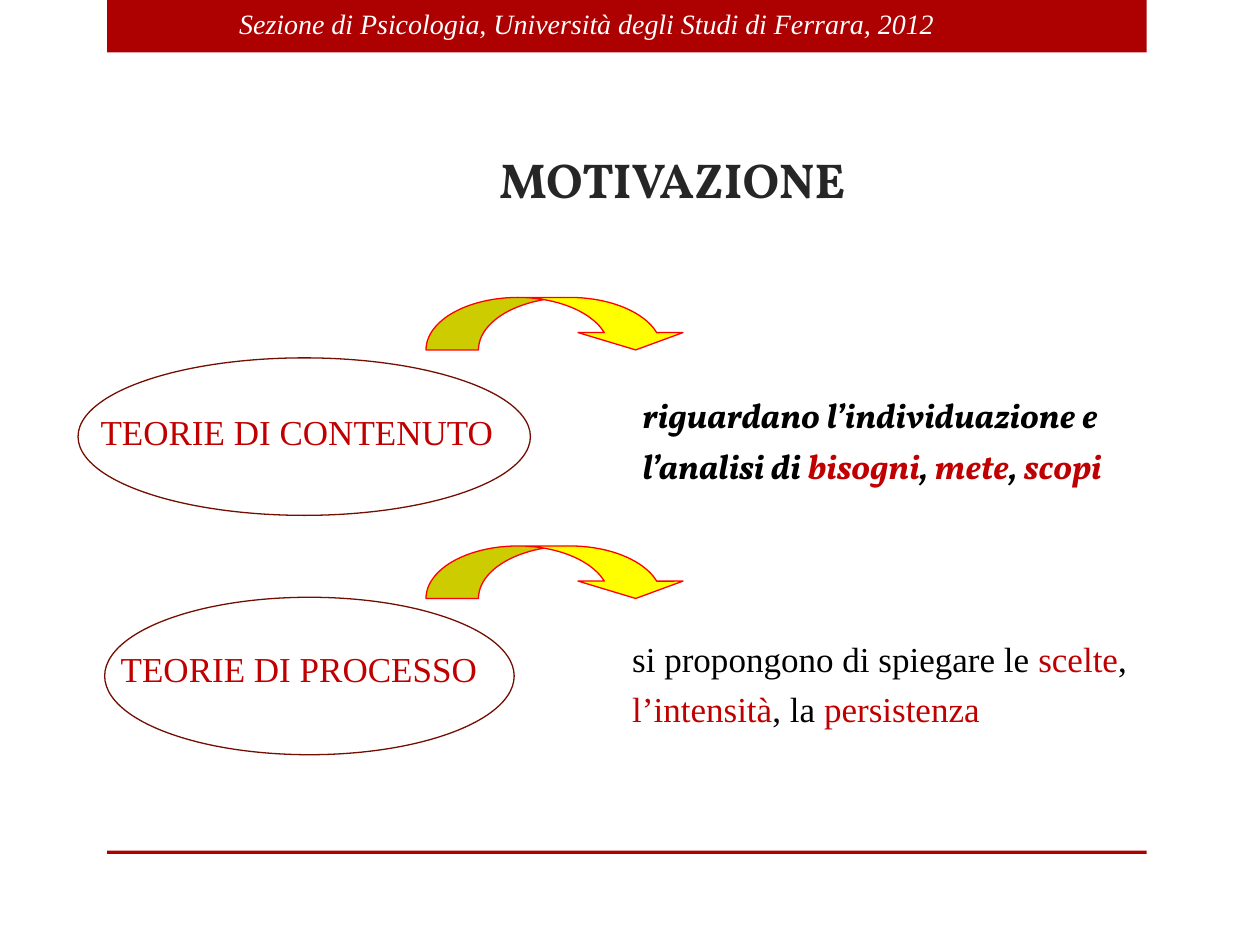
from lxml import etree
from pptx import Presentation
from pptx.dml.color import RGBColor
from pptx.enum.shapes import MSO_SHAPE
from pptx.enum.text import MSO_ANCHOR, PP_ALIGN
from pptx.util import Pt

RECT, ELLIPSE, ARROW = MSO_SHAPE.RECTANGLE, MSO_SHAPE.OVAL, MSO_SHAPE.CURVED_DOWN_ARROW
BOTTOM, CENTER = MSO_ANCHOR.BOTTOM, PP_ALIGN.CENTER

WHITE = RGBColor(0xFF, 0xFF, 0xFF)
BLACK = RGBColor(0, 0, 0)
CHARCOAL = RGBColor(0x26, 0x26, 0x26)
BAND_RED = RGBColor(0xAD, 0x01, 0x01)
DARK_RED = RGBColor(0x73, 0x0E, 0x00)
KEY_RED = RGBColor(0xC0, 0x00, 0x00)
RED = RGBColor(0xFF, 0, 0)
YELLOW = RGBColor(0xFF, 0xFF, 0)

SERIF, DISPLAY = "Times New Roman", "Vollkorn"
LABEL = {"name": SERIF, "size": Pt(20)}
STRONG = {"name": DISPLAY, "size": Pt(20), "bold": True, "italic": True}

# Boxes inside a row are (left, top, width, height) from the row's corner.
ROWS = [
    {
        "box": (44.6, 170, 663, 125),
        "ellipse": (0, 34.5, 258.5, 90),
        "label": ("TEORIE DI CONTENUTO", (5.8, 61.1, 256.3, 44)),
        "text_box": (315.4, 46.7, 306, 65.5),
        "text_fill": WHITE,
        "style": STRONG,
        "runs": [("riguardano l’individuazione e l’analisi di ", BLACK),
                 ("bisogni", KEY_RED), (", ", BLACK), ("mete", KEY_RED),
                 (", ", BLACK), ("scopi", KEY_RED)],
    },
    {
        "box": (44.6, 312, 663, 120),
        "ellipse": (15.2, 29.3, 234, 90),
        "label": ("TEORIE DI PROCESSO", (17.3, 54.5, 234.7, 44)),
        "text_box": (309.6, 43.7, 354.2, 65.5),
        "text_fill": None,
        "style": LABEL,
        "runs": [("si propongono di spiegare le ", BLACK), ("scelte", KEY_RED),
                 (", ", BLACK), ("l’intensità", KEY_RED), (", la ", BLACK),
                 ("persistenza", KEY_RED)],
    },
]


def inside(box, part):
    return box[0] + part[0], box[1] + part[1], part[2], part[3]


def add_shape(s, kind, box, fill, line=None):
    sp = s.shapes.add_shape(kind, *map(Pt, box))
    sp.shadow.inherit = False
    sp.fill.solid()
    sp.fill.fore_color.rgb = fill
    if line is None:
        sp.line.fill.background()
    else:
        sp.line.color.rgb = line
        sp.line.width = Pt(0.75)
    return sp


def write_runs(p, runs, style):
    for text, color in runs:
        r = p.add_run()
        r.text = text
        for key, value in style.items():
            setattr(r.font, key, value)
        r.font.color.rgb = color


def add_text(s, box, runs, style, fill=None, spacing=None):
    sp = s.shapes.add_textbox(*map(Pt, box))
    if fill is not None:
        sp.fill.solid()
        sp.fill.fore_color.rgb = fill
    tf = sp.text_frame
    tf.word_wrap = True
    p = tf.paragraphs[0]
    p.line_spacing = spacing
    write_runs(p, runs, style)


def add_frame(s, box):
    """Header band with its caption, and the rule at the foot."""
    width, height = box[2:]
    add_shape(s, RECT, inside(box, (0, 0, width, 30)), BAND_RED)
    add_shape(s, RECT, inside(box, (0, height - 2, width, 2)), BAND_RED)
    add_text(s, inside(box, (68.4, 0, 422, 27)),
             [("Sezione di Psicologia, Università degli Studi di Ferrara, 2012", WHITE)],
             {"name": SERIF, "size": Pt(16), "italic": True})


def add_title(s, box):
    sp = s.shapes.title
    sp.left, sp.top, sp.width, sp.height = map(Pt, box)
    tf = sp.text_frame
    tf.vertical_anchor = BOTTOM
    p = tf.paragraphs[0]
    p.alignment = CENTER
    write_runs(p, [("MOTIVAZIONE", CHARCOAL)],
               {"name": DISPLAY, "size": Pt(28), "bold": True})


def add_theory_row(s, row):
    box = row["box"]
    add_shape(s, ELLIPSE, inside(box, row["ellipse"]), WHITE, DARK_RED)
    add_text(s, inside(box, row["text_box"]), row["runs"], row["style"],
             row["text_fill"], 1.2)
    label, label_box = row["label"]
    add_text(s, inside(box, label_box), [(label, KEY_RED)], LABEL)
    arrow = add_shape(s, ARROW, inside(box, (198.8, 0, 149.8, 30)), YELLOW, RED)
    for i, value in enumerate((1, 2, 0.33)):
        arrow.adjustments[i] = value


def main():
    prs = Presentation()
    prs.slide_width, prs.slide_height = Pt(720), Pt(540)
    s = prs.slides.add_slide(prs.slide_layouts[5])
    add_frame(s, (61.2, 0, 594, 488))
    add_title(s, (59.8, 72, 648.7, 50.4))
    for row in ROWS:
        add_theory_row(s, row)
    prs.save("out.pptx")


if __name__ == "__main__":
    main()
